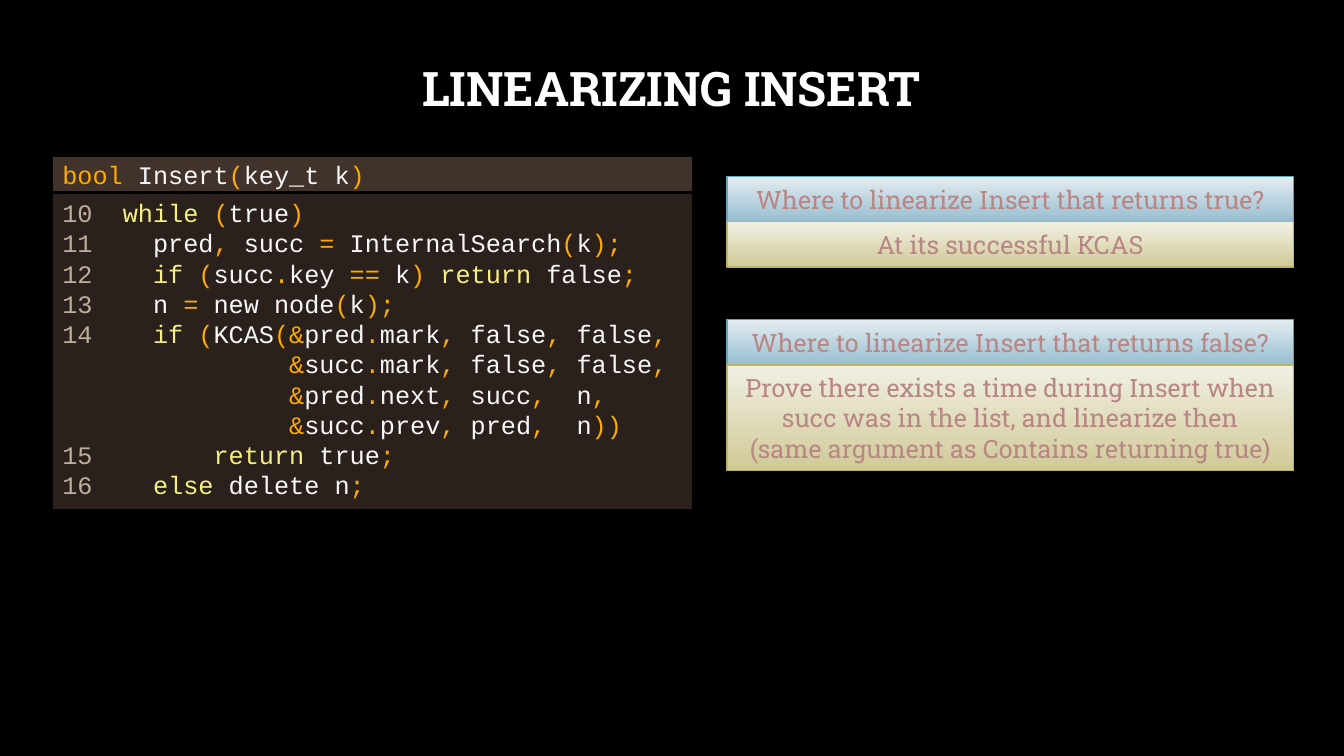
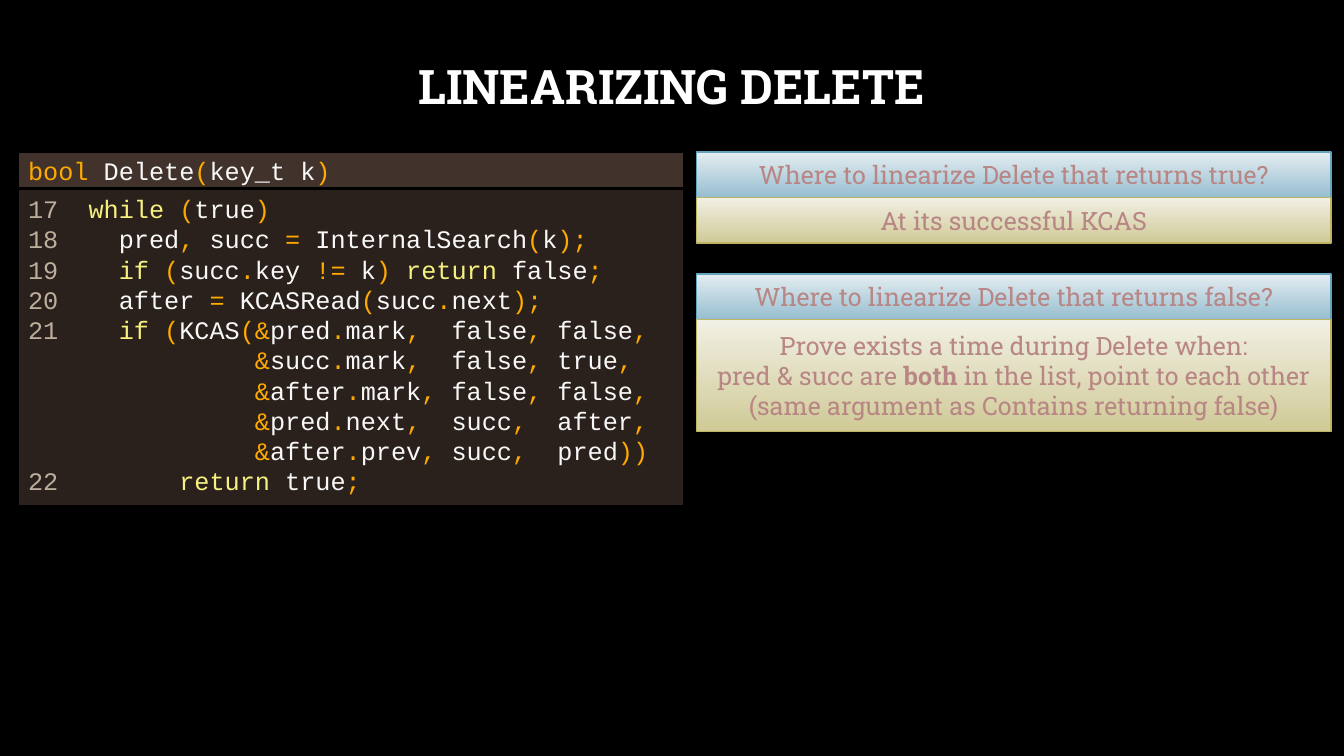
import itertools

import pptx
import pptx.dml.color
import pptx.enum.shapes
import pptx.enum.text
import pptx.oxml.ns
import pptx.util
from lxml import etree

Inches = pptx.util.Inches
Pt = pptx.util.Pt
RGBColor = pptx.dml.color.RGBColor
ALIGN = pptx.enum.text.PP_ALIGN
ANCHOR = pptx.enum.text.MSO_ANCHOR
RECT = pptx.enum.shapes.MSO_SHAPE.RECTANGLE

BLACK = RGBColor(0x00, 0x00, 0x00)
WHITE = RGBColor(0xFF, 0xFF, 0xFF)
ROSE = RGBColor(0xB8, 0x86, 0x84)
BROWN = RGBColor(0x2A, 0x21, 0x1C)
UMBER = RGBColor(0x41, 0x33, 0x2B)
TAN = RGBColor(0xBD, 0xAE, 0x9D)
PALE = RGBColor(0xF8, 0xF8, 0xF8)
YELLOW = RGBColor(0xF6, 0xF0, 0x80)
ORANGE = RGBColor(0xFF, 0xAA, 0x00)
BLUE = (RGBColor(0xE4, 0xED, 0xF1), RGBColor(0x97, 0xBE, 0xD0), RGBColor(0x64, 0xA4, 0xBD))
OLIVE = (RGBColor(0xF1, 0xF0, 0xE4), RGBColor(0xD0, 0xCA, 0x97), RGBColor(0xBD, 0xB5, 0x64))

SERIF = "Roboto Slab"
MONO = "Courier New"
CHAR = 0.15
HEAD = 0.36
ROW = 0.45
KEYS = {"while", "if", "else", "return"}

INSERT = [
    ("10\twhile (true)", [4]),
    ("11\tpred, succ = InternalSearch(k);", [6]),
    ("12\tif (succ.key == k) return false;", [6]),
    ("13\tn = new node(k);", [6]),
    ("14\tif (KCAS(&pred.mark,\tfalse,\tfalse,", [6, 27, 34]),
    ("\t&succ.mark,\tfalse,\tfalse,", [15, 27, 34]),
    ("\t&pred.next,\tsucc,\tn,", [15, 27, 34]),
    ("\t&succ.prev,\tpred,\tn))", [15, 27, 34]),
    ("15\treturn true;", [10]),
    ("16\telse delete n;", [6]),
]
DELETE = [
    ("17\twhile (true)", [4]),
    ("18\tpred, succ = InternalSearch(k);", [6]),
    ("19\tif (succ.key != k) return false;", [6]),
    ("20\tafter = KCASRead(succ.next);", [6]),
    ("21\tif (KCAS(&pred.mark,\tfalse,\tfalse,", [6, 28, 35]),
    ("\t&succ.mark,\tfalse,\ttrue,", [15, 28, 35]),
    ("\t&after.mark,\tfalse,\tfalse,", [15, 28, 35]),
    ("\t&pred.next,\tsucc,\tafter,", [15, 28, 35]),
    ("\t&after.prev,\tsucc,\tpred))", [15, 28, 35]),
    ("22\treturn true;", [10]),
]
KCAS = [[("At its successful KCAS", False)]]
LISTED = [
    [("Prove there exists a time during Insert when succ was in the list, and linearize then", False)],
    [("(same argument as Contains returning true)", False)],
]
LINKED = [
    [("Prove exists a time during Delete when:", False)],
    [("pred & succ are ", False), ("both ", True), ("in the list, point to each other", False)],
    [("(same argument as Contains returning false)", False)],
]


def write(para, text, font, size, color, bold=False):
    run = para.add_run()
    run.text = text
    run.font.name = font
    run.font.size = Pt(size)
    run.font.color.rgb = color
    run.font.bold = bold


def lines(frame, count):
    return [frame.paragraphs[0]] + [frame.add_paragraph() for _ in range(count - 1)]


def block(slide, left, top, width, height, edge, weight, anchor):
    shape = slide.shapes.add_shape(RECT, Inches(left), Inches(top), Inches(width), Inches(height))
    shape.shadow.inherit = False
    shape.line.color.rgb = edge
    shape.line.width = Pt(weight)
    shape.text_frame.word_wrap = True
    shape.text_frame.vertical_anchor = anchor
    return shape


def title(slide, text, height):
    box = slide.shapes.add_textbox(Inches(1), Inches(0.47), Inches(11.32), Inches(height))
    box.text_frame.word_wrap = True
    box.text_frame.vertical_anchor = ANCHOR.MIDDLE
    para = box.text_frame.paragraphs[0]
    para.alignment = ALIGN.CENTER
    para.line_spacing = 0.9
    write(para, text, SERIF, 34, WHITE, True)


def kind(char):
    if char.isspace():
        return "gap"
    return "word" if char.isalnum() or char == "_" else "sign"


def tint(sort, word):
    if sort == "sign" or word == "bool":
        return ORANGE
    if sort == "gap" or word.isdigit():
        return TAN
    return YELLOW if word in KEYS else PALE


def code(para, text, stops=()):
    para.alignment = ALIGN.LEFT
    if stops:
        tabs = etree.SubElement(para._p.get_or_add_pPr(), pptx.oxml.ns.qn("a:tabLst"))
        for stop in stops:
            etree.SubElement(tabs, pptx.oxml.ns.qn("a:tab"), pos=str(Inches(stop * CHAR)), algn="l")
    for sort, chars in itertools.groupby(text, kind):
        word = "".join(chars)
        write(para, word, MONO, 18, tint(sort, word))


def listing(slide, left, top, width, name, rows):
    body = block(slide, left, top + HEAD, width, 3.15, BLACK, 1.5, ANCHOR.TOP)
    body.fill.solid()
    body.fill.fore_color.rgb = BROWN
    for para, (text, stops) in zip(lines(body.text_frame, len(rows)), rows):
        code(para, text, stops)
    head = block(slide, left, top, width, HEAD, BLACK, 1.5, ANCHOR.MIDDLE)
    head.fill.solid()
    head.fill.fore_color.rgb = UMBER
    code(head.text_frame.paragraphs[0], f"bool {name}(key_t k)")


def card(slide, left, top, width, height, shades, paras):
    start, end, edge = shades
    shape = block(slide, left, top, width, height, edge, 1, ANCHOR.MIDDLE)
    shape.fill.gradient()
    shape.fill.gradient_angle = 270
    for stop, color in zip(shape.fill.gradient_stops, (start, end)):
        stop.color.rgb = color
    for para, runs in zip(lines(shape.text_frame, len(paras)), paras):
        para.alignment = ALIGN.CENTER
        for text, bold in runs:
            write(para, text, SERIF, 18, ROSE, bold)


def answer(slide, left, top, width, height, name, value, paras):
    query = f"Where to linearize {name} that returns {value}?"
    card(slide, left, top, width, ROW, BLUE, [[(query, False)]])
    card(slide, left, top + ROW, width, height, OLIVE, paras)


def build(deck, name, tall, panel, rows, side, tops, depth, proof):
    slide = deck.slides.add_slide(deck.slide_layouts[6])
    title(slide, f"LINEARIZING {name.upper()}", tall)
    left, width = side
    answer(slide, left, tops[1], width, depth, name, "false", proof)
    answer(slide, left, tops[0], width, ROW, name, "true", KCAS)
    listing(slide, *panel, name, rows)


def main():
    deck = pptx.Presentation()
    deck.slide_width = Inches(13.33)
    deck.slide_height = Inches(7.5)
    fill = deck.slide_master.background.fill
    fill.solid()
    fill.fore_color.rgb = BLACK
    build(deck, "Insert", 0.86, (0.52, 1.55, 6.35), INSERT, (7.21, 5.62), (1.75, 3.17), 1.05, LISTED)
    build(deck, "Delete", 0.82, (0.18, 1.51, 6.61), DELETE, (6.91, 6.29), (1.51, 2.72), 1.11, LINKED)
    deck.save("out.pptx")


if __name__ == "__main__":
    main()
